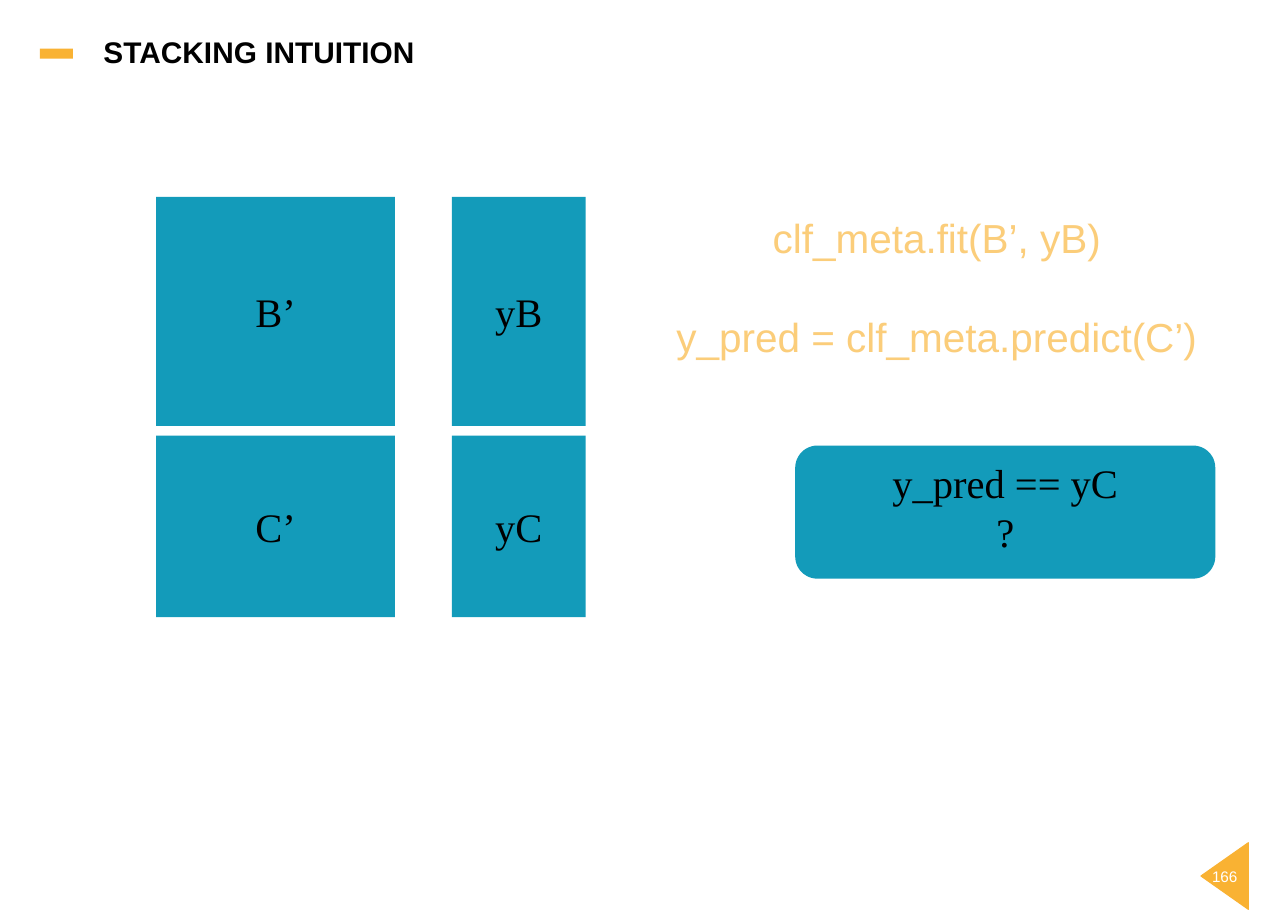
from dataclasses import dataclass

from pptx import Presentation
from pptx.dml.color import RGBColor
from pptx.enum.shapes import MSO_SHAPE as Preset
from pptx.enum.text import MSO_ANCHOR as Anchor, PP_ALIGN as Align
from pptx.shapes.autoshape import Shape
from pptx.slide import Slide
from pptx.util import Inches, Length, Pt

SLIDE_WIDTH, SLIDE_HEIGHT = Inches(11.71), Inches(8.28)


@dataclass(frozen=True)
class Theme:
    orange: str = "F9B233"
    pale_orange: str = "FBCD7A"
    teal: str = "139BBA"
    black: str = "000000"
    white: str = "FFFFFF"
    sans: str = "Arial"
    serif: str = "Times New Roman"
    title_size: float = 19.5
    body_size: float = 26.5
    number_size: float = 10
    code_gap: float = 33


THEME = Theme()


@dataclass(frozen=True)
class Area:
    """Place and size in percent of the slide's width and height."""
    left: float
    top: float
    width: float
    height: float

    def lengths(self) -> tuple[Length, Length, Length, Length]:
        return (across(self.left), down(self.top), across(self.width), down(self.height))


@dataclass(frozen=True)
class Wording:
    lines: tuple[str, ...]
    size: float = THEME.body_size
    font: str = THEME.serif
    color: str = THEME.black
    bold: bool = False
    align: Align = Align.CENTER
    gap: float = 0
    lift: float = 0


@dataclass(frozen=True)
class Block:
    area: Area
    fill: str = THEME.teal
    wording: Wording | None = None
    preset: Preset = Preset.RECTANGLE


@dataclass(frozen=True)
class Span:
    start: float
    extent: float


def across(percent: float) -> Length:
    return Length(round(SLIDE_WIDTH * percent / 100))


def down(percent: float) -> Length:
    return Length(round(SLIDE_HEIGHT * percent / 100))


def write(holder: Shape, wording: Wording) -> None:
    frame = holder.text_frame
    frame_format = {
        "margin_left": 0, "margin_right": 0, "margin_top": 0,
        "margin_bottom": down(wording.lift),
        "word_wrap": True, "vertical_anchor": Anchor.MIDDLE,
    }
    for name, value in frame_format.items():
        setattr(frame, name, value)
    font_format = {
        "size": Pt(wording.size), "name": wording.font, "bold": wording.bold,
    }
    for index, line in enumerate(wording.lines):
        paragraph = frame.add_paragraph() if index else frame.paragraphs[0]
        paragraph.alignment = wording.align
        paragraph.space_before = Pt(wording.gap if index else 0)
        run = paragraph.add_run()
        run.text = line
        for name, value in font_format.items():
            setattr(run.font, name, value)
        run.font.color.rgb = RGBColor.from_string(wording.color)


def paint(shape: Shape, fill: str) -> None:
    shape.shadow.inherit = False
    shape.fill.solid()
    shape.fill.fore_color.rgb = RGBColor.from_string(fill)
    shape.line.fill.background()


def draw_block(slide: Slide, block: Block) -> None:
    shape = slide.shapes.add_shape(block.preset, *block.area.lengths())
    paint(shape, block.fill)
    if block.wording:
        write(shape, block.wording)


def draw_text(slide: Slide, area: Area, wording: Wording) -> None:
    write(slide.shapes.add_textbox(*area.lengths()), wording)


def draw_page_marker(slide: Slide, area: Area, number: Wording) -> None:
    """Draw the triangle that points left and holds the page number."""
    left, top, width, height = area.lengths()
    outline = slide.shapes.build_freeform(left, top + height // 2)
    outline.add_line_segments([(left + width, top + height), (left + width, top)])
    marker = outline.convert_to_shape()
    paint(marker, THEME.orange)
    marker.line.color.rgb = RGBColor.from_string(THEME.orange)
    marker.line.width = Pt(0.79)
    write(marker, number)


FEATURES, TARGETS = Span(12.13, 18.53), Span(35.08, 10.4)
TRAINING, TESTING = Span(21.62, 25.12), Span(47.83, 19.93)
DATA_SETS = (
    ("B’", FEATURES, TRAINING), ("yB", TARGETS, TRAINING),
    ("C’", FEATURES, TESTING), ("yC", TARGETS, TESTING),
)

BLOCKS = [Block(Area(3.1, 5.35, 2.56, 1.09), THEME.orange)]
BLOCKS += [
    Block(Area(column.start, row.start, column.extent, row.extent),
          wording=Wording((label,)))
    for label, column, row in DATA_SETS
]
BLOCKS.append(Block(
    Area(61.74, 48.91, 32.62, 14.61),
    wording=Wording(("y_pred == yC", "?"), lift=1.2),
    preset=Preset.ROUNDED_RECTANGLE,
))

TEXTS = (
    (Area(8.03, 3.8, 30, 3.62),
     Wording(("STACKING INTUITION",), THEME.title_size, THEME.sans,
             bold=True, align=Align.LEFT)),
    (Area(51.4, 23.91, 42.7, 15.22),
     Wording(("clf_meta.fit(B’, yB)", "y_pred = clf_meta.predict(C’)"),
             font=THEME.sans, color=THEME.pale_orange, gap=THEME.code_gap)),
)


def main() -> None:
    deck = Presentation()
    deck.slide_width, deck.slide_height = SLIDE_WIDTH, SLIDE_HEIGHT
    slide = deck.slides.add_slide(deck.slide_layouts[6])
    for block in BLOCKS:
        draw_block(slide, block)
    for area, wording in TEXTS:
        draw_text(slide, area, wording)
    draw_page_marker(slide, Area(93.25, 92.51, 3.67, 7.3),
                     Wording(("166",), THEME.number_size, THEME.sans, THEME.white))
    deck.save("out.pptx")


if __name__ == "__main__":
    main()
